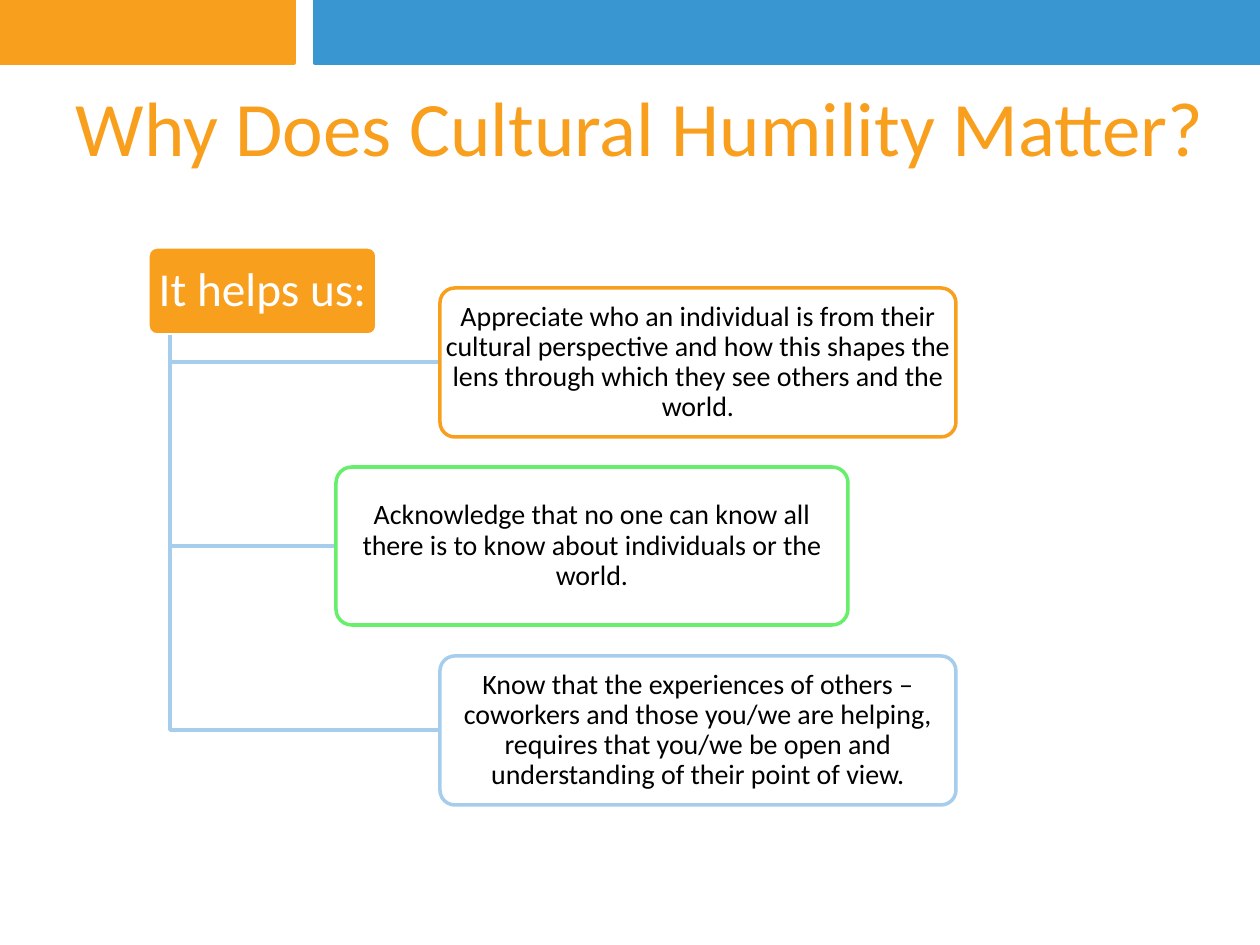
from dataclasses import dataclass

from lxml import etree
from pptx import Presentation
from pptx.dml.color import RGBColor
from pptx.enum.shapes import MSO_SHAPE
from pptx.enum.text import MSO_ANCHOR, PP_ALIGN
from pptx.oxml.ns import qn
from pptx.util import Emu, Pt

RECTANGLE, ROUNDED = MSO_SHAPE.RECTANGLE, MSO_SHAPE.ROUNDED_RECTANGLE
MIDDLE, CENTER = MSO_ANCHOR.MIDDLE, PP_ALIGN.CENTER
PX = 914400 / 126


@dataclass(frozen=True)
class Theme:
    font: str = "Calibri"
    orange: str = "F89F1E"
    blue: str = "3A96D0"
    light_blue: str = "A7CDED"
    green: str = "67EE6A"
    white: str = "FFFFFF"
    black: str = "000000"
    title_size: int = 44
    heading_size: int = 27
    reason_size: int = 16
    line_width: int = 2


theme = Theme()


def write_text(shape, text, *, size, color, margins=(0, 0), spacing=0.9):
    """Fill a shape with one centred paragraph; margins are (side, top) in px."""
    frame = shape.text_frame
    frame.word_wrap = True
    frame.vertical_anchor = MIDDLE
    side, top = (Emu(round(margin * PX)) for margin in margins)
    frame.margin_left = frame.margin_right = side
    frame.margin_top = frame.margin_bottom = top
    paragraph = frame.paragraphs[0]
    paragraph.alignment = CENTER
    paragraph.line_spacing = spacing
    run = paragraph.add_run()
    run.text = text
    run.font.name = theme.font
    run.font.size = Pt(size)
    run.font.color.rgb = RGBColor.from_string(color)


def add_box(kind, box, fill, line):
    """Add a filled, outlined shape; box is (left, top, width, height) in px."""
    shape = slide.shapes.add_shape(kind, *(Emu(round(n * PX)) for n in box))
    shape.shadow.inherit = False
    shape.fill.solid()
    shape.fill.fore_color.rgb = RGBColor.from_string(fill)
    shape.line.color.rgb = RGBColor.from_string(line)
    shape.line.width = Pt(theme.line_width)
    if kind == ROUNDED:
        shape.adjustments[0] = 0.1
    return shape


presentation = Presentation()
presentation.slide_width = Emu(round(1260 * PX))
presentation.slide_height = Emu(round(945 * PX))
slide = presentation.slides.add_slide(presentation.slide_layouts[5])

# Header bands
for left, width, color in ((0, 294, theme.orange), (315, 945, theme.blue)):
    add_box(RECTANGLE, (left, 0, width, 63), color, color)

title = slide.shapes.title
title.left, title.top, title.width, title.height = (
    Emu(round(n * PX)) for n in (42, 58, 1197, 136)
)
write_text(title, "Why Does Cultural Humility Matter?", size=theme.title_size,
           color=theme.orange, margins=(12, 6), spacing=1.0)

# Heading and the reasons that branch from it
heading = add_box(ROUNDED, (148, 247, 229, 88), theme.orange, theme.white)
write_text(heading, "It helps us:", size=theme.heading_size,
           color=theme.white, margins=(5, 3))

TRUNK_X, TRUNK_TOP = 170, 335
reasons = [
    ((440, 288, 516, 149), theme.orange,
     "Appreciate who an individual is from their cultural perspective and how "
     "this shapes the lens through which they see others and the world."),
    ((336, 467, 512, 158), theme.green,
     "Acknowledge that no one can know all there is to know about individuals "
     "or the world."),
    ((440, 656, 516, 149), theme.light_blue,
     "Know that the experiences of others – coworkers and those you/we are "
     "helping, requires that you/we be open and understanding of their point "
     "of view."),
]
for box, outline, sentence in reasons:
    left, top, width, height = box
    branch_y = top + height // 2
    builder = slide.shapes.build_freeform(TRUNK_X, TRUNK_TOP, scale=PX)
    builder.add_line_segments([(TRUNK_X, branch_y), (left, branch_y)], close=False)
    branch = builder.convert_to_shape()
    branch.shadow.inherit = False
    branch.fill.background()
    branch.line.color.rgb = RGBColor.from_string(theme.light_blue)
    branch.line.width = Pt(theme.line_width)

    reason = add_box(ROUNDED, box, theme.white, outline)
    fill_color = reason.fill._xPr.find(qn("a:solidFill")).find(qn("a:srgbClr"))
    etree.SubElement(fill_color, qn("a:alpha"), val="90000")
    write_text(reason, sentence, size=theme.reason_size, color=theme.black)

presentation.save("out.pptx")
